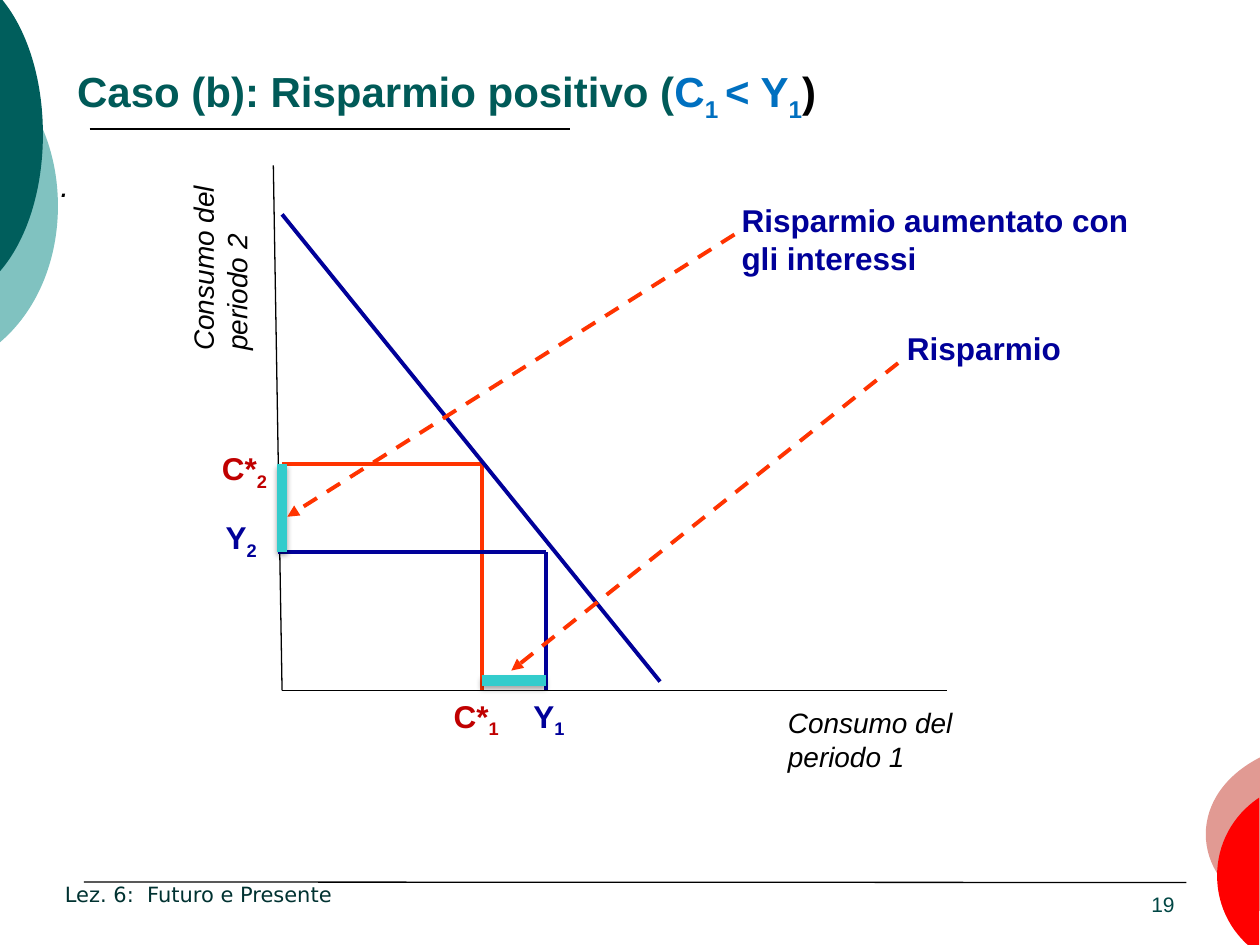
from dataclasses import dataclass

from lxml.etree import SubElement
from pptx import Presentation
from pptx.dml.color import RGBColor
from pptx.enum.dml import MSO_LINE
from pptx.enum.shapes import MSO_CONNECTOR
from pptx.enum.text import MSO_ANCHOR, PP_ALIGN
from pptx.oxml.ns import qn
from pptx.util import Pt


@dataclass(frozen=True)
class Theme:
    black: str = "000000"
    teal: str = "005E5C"
    mint: str = "80C2C0"
    red: str = "FF0000"
    rose: str = "E19A93"
    title: str = "005A58"
    blue: str = "0070C0"
    navy: str = "000099"
    wine: str = "C00000"
    flame: str = "FF3300"
    aqua: str = "33CCCC"
    foot: str = "003231"
    page: str = "004644"
    font: str = "Arial"
    alt: str = "DejaVu Sans"
    head: int = 24
    body: int = 18
    axis: int = 16
    small: int = 12
    thin: float = 0.75
    rule: float = 1
    thick: float = 2.25
    band: float = 6


T = Theme()
WIDE, HIGH = 720, 540


def add_text(slide, box, runs, size, bold=False, italic=False, font=T.font,
             anchor=MSO_ANCHOR.TOP, align=PP_ALIGN.LEFT):
    """Add a text box; each run is (text, colour) or (text, colour, True) for a subscript."""
    frame = slide.shapes.add_textbox(*map(Pt, box)).text_frame
    frame.word_wrap = True
    frame.vertical_anchor = anchor
    para = frame.paragraphs[0]
    para.alignment = align
    for text, color, *sub in runs:
        run = para.add_run()
        run.text = text
        style = run.font
        style.name, style.size = font, Pt(size)
        style.bold, style.italic = bold, italic
        style.color.rgb = RGBColor.from_string(color)
        if sub:
            run._r.get_or_add_rPr().set("baseline", "-25000")
    return frame


def add_line(slide, start, end, color, width, arrow=False, shadow=False):
    """Join two points; an arrow is dashed and has its head at the end."""
    line = slide.shapes.add_connector(MSO_CONNECTOR.STRAIGHT, *map(Pt, (*start, *end)))
    line.line.color.rgb = RGBColor.from_string(color)
    line.line.width = Pt(width)
    props = line._element.spPr
    if arrow:
        line.line.dash_style = MSO_LINE.DASH
        SubElement(line.line._get_or_add_ln(), qn("a:tailEnd"), type="triangle")
    effect = SubElement(props, qn("a:effectLst"))
    if shadow:
        cast = SubElement(effect, qn("a:outerShdw"), blurRad=str(Pt(3.1)),
                          dist=str(Pt(1.8)), dir="5400000", rotWithShape="0")
        tint = SubElement(cast, qn("a:srgbClr"), val=T.black)
        SubElement(tint, qn("a:alpha"), val="35000")


def add_lens(slide, box, bulge, inset, color, turn=0):
    """Fill the round segment at the right of a box, as two curves that meet at its tip."""
    left, top, width, high = box
    cut, low, mid = width - bulge, high - inset, high / 2
    span = high - 2 * inset
    near, far = cut + 0.64 * bulge, inset + 0.3 * span
    bend = inset + 0.115 * span
    curves = (
        ((near, bend), (width, far), (width, mid)),
        ((width, high - far), (near, high - bend), (cut, low)),
    )
    pen = slide.shapes.build_freeform(Pt(cut), Pt(inset))
    pen.add_line_segments([(Pt(x), Pt(y)) for x, y in ((width, mid), (cut, low))])
    lens = pen.convert_to_shape()
    lens.left, lens.top, lens.width, lens.height = map(Pt, box)
    lens.rotation = turn
    lens.shadow.inherit = False
    lens.fill.solid()
    lens.fill.fore_color.rgb = RGBColor.from_string(color)
    lens.line.fill.background()

    track = lens._element.spPr.find(".//" + qn("a:path"))
    track.clear()
    track.set("w", str(Pt(width)))
    track.set("h", str(Pt(high)))
    for verb, points in (("moveTo", ((cut, inset),)),
                         *(("cubicBezTo", curve) for curve in curves)):
        step = SubElement(track, qn("a:" + verb))
        for x, y in points:
            SubElement(step, qn("a:pt"), x=str(Pt(x)), y=str(Pt(y)))
    SubElement(track, qn("a:close"))


def add_decor(slide):
    add_lens(slide, (-121.7, 22.3, 154.8, 190.8), 33.5, 17.2, T.mint)
    add_lens(slide, (-91.4, -19.4, 115.9, 192.2), 25, 17.2, T.teal)
    add_lens(slide, (689, 423.4, 146.9, 106.6), 31, 9.4, T.rose, 180)
    add_lens(slide, (695.5, 446.4, 110.2, 108), 24, 9.4, T.red, 180)


def add_title(slide, left, top, width, high):
    add_text(slide, (left, top, width, high), [
        ("Caso (b): Risparmio positivo (", T.title), ("C", T.blue), ("1 ", T.blue, True),
        ("< Y", T.blue), ("1", T.blue, True), (")", T.black),
    ], T.head, bold=True, anchor=MSO_ANCHOR.BOTTOM)
    rule = top + high - 0.4
    add_line(slide, (left + 14.2, rule), (left + 289, rule), T.black, T.rule)


def add_body(slide, left, top, width, high):
    frame = add_text(slide, (left, top, width, high), [(".", T.black)], T.body, italic=True)
    frame.paragraphs[0].line_spacing = 1.14
    frame.paragraphs[0].space_before = Pt(6)


def add_footer(slide, left, top, width):
    add_line(slide, (left + 18, top), (left + width, top + 0.3), T.black, T.thin)
    add_text(slide, (left, top - 0.4, 306, 18), [("Lez. 6:  Futuro e Presente", T.foot)],
             T.small, font=T.alt, anchor=MSO_ANCHOR.BOTTOM)
    add_text(slide, (left + width - 91.2, top - 12.6, 91.5, 36), [("19", T.page)],
             T.small, anchor=MSO_ANCHOR.BOTTOM, align=PP_ALIGN.RIGHT)


def add_graph(slide, left, base):
    """Draw the graph from its axis origin, with heights counted upwards."""
    c1, y1, c2, y2 = 114, 151, 129.5, 79

    def at(x, y):
        return left + x, base - y

    def link(start, end, *style, **kind):
        add_line(slide, at(*start), at(*end), *style, **kind)

    def note(x, y, width, high, *runs, **kind):
        return add_text(slide, (*at(x, y), width, high), runs, **kind)

    link((-5, 300), (0, 0), T.black, T.thin)
    link((0, 0), (380, 0), T.black, T.thin)
    axis = dict(size=T.axis, italic=True)
    tall = note(-58.5, 306, 53, 119, ("Consumo del periodo 2", T.black), **axis)
    tall._txBody.bodyPr.set("vert", "vert270")
    note(282, -5.3, 121.5, 46, ("Consumo del periodo 1", T.black), **axis)

    for start, corner, end, color in (
        ((0, c2), (c1, c2), (c1, 0), T.flame),
        ((-2.5, y2), (y1, y2), (y1, 0), T.navy),
    ):
        link(start, corner, color, T.thick)
        link(corner, end, color, T.thick)
    link((0, 272), (216, 5), T.navy, T.thick)
    for start, end in (((c1, 5.6), (y1, 5.6)), ((0, y2), (0, c2))):
        link(start, end, T.aqua, T.band, shadow=True)

    bold = dict(size=T.body, bold=True)
    for x, y, name, sub, color in (
        (91, 0, "C*", "1", T.wine), (-41.5, 141.6, "C*", "2", T.wine),
        (136.5, 0, "Y", "1", T.navy), (-39.3, 102, "Y", "2", T.navy),
    ):
        note(x, y, 52, 29, (name, color), (sub, color, True), **bold)

    for x, y, width, high, text, start, end in (
        (350, 210, 149, 29, "Risparmio", (352, 187), (131, 11.3)),
        (255.5, 283, 255, 51, "Risparmio aumentato con gli interessi",
         (258.5, 260.5), (3, 99.2)),
    ):
        link(start, end, T.flame, T.thick, arrow=True)
        note(x, y, width, high, (text, T.navy), **bold)


def main():
    deck = Presentation()
    deck.slide_width, deck.slide_height = Pt(WIDE), Pt(HIGH)
    slide = deck.slides.add_slide(deck.slide_layouts[6])
    add_decor(slide)
    add_title(slide, 37, 3.5, 576, 70.5)
    add_body(slide, 27.5, 88.5, 661.5, 408)
    add_footer(slide, 30, 504, 648)
    add_graph(slide, 161.2, 394.5)
    deck.save("out.pptx")


if __name__ == "__main__":
    main()
